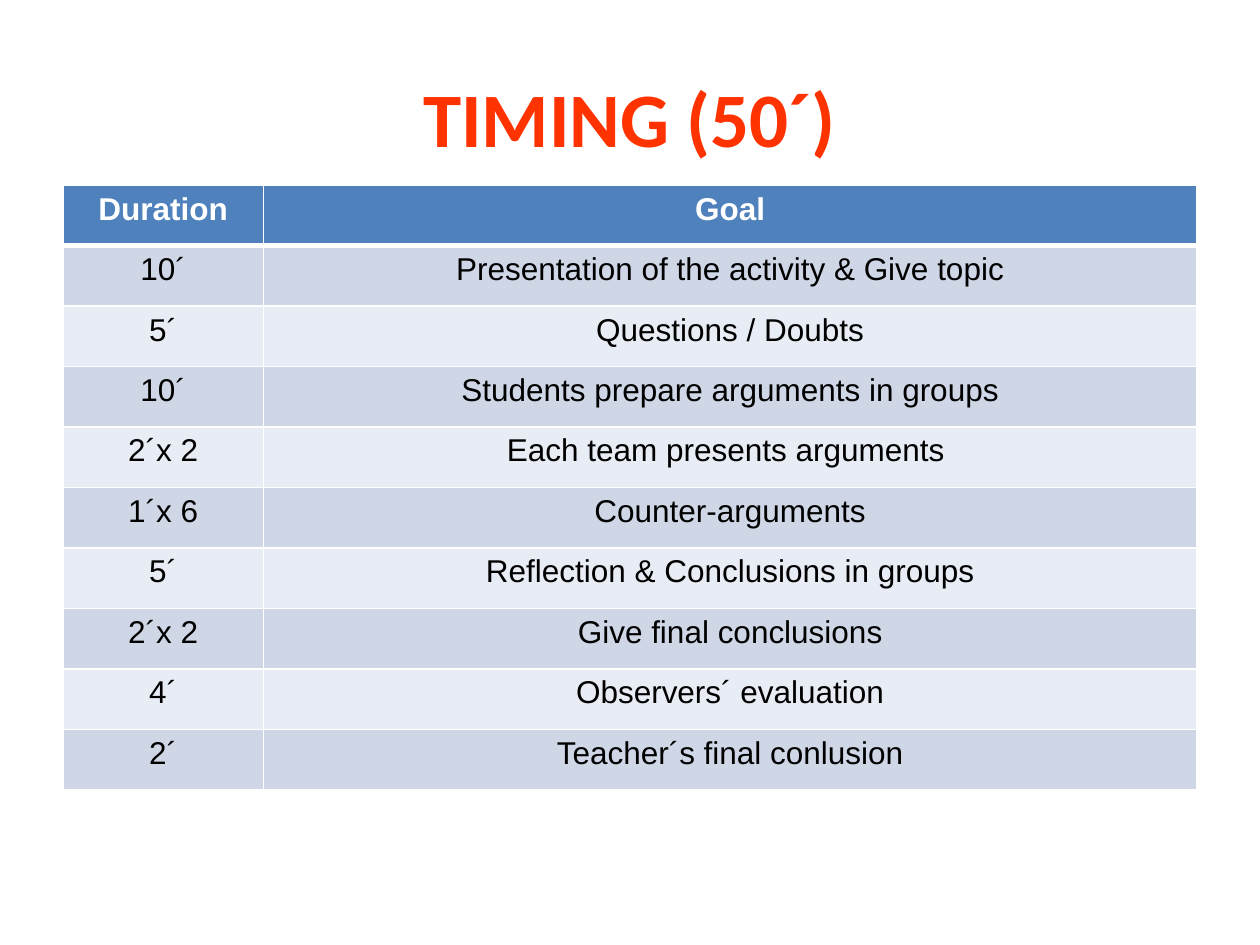
from dataclasses import dataclass

from lxml.etree import SubElement
from pptx import Presentation
from pptx.dml.color import RGBColor
from pptx.enum.text import MSO_ANCHOR, PP_ALIGN
from pptx.oxml.ns import qn
from pptx.util import Inches, Pt

COLORS = {
    "title": "FF3300",
    "header": "4F81BD",
    "band_dark": "CFD7E7",
    "band_light": "E8ECF4",
    "white": "FFFFFF",
    "black": "000000",
}
COLUMN_WIDTHS = (1.59, 7.41)
ROW_HEIGHT = 0.48
GRID_LINE, HEADER_LINE = 1, 3


@dataclass(frozen=True)
class Stage:
    duration: str
    goal: str


@dataclass(frozen=True)
class RowStyle:
    fill: str
    text: str
    bold: bool
    top: int
    bottom: int


HEADING = Stage("Duration", "Goal")
STAGES = [
    Stage("10´", "Presentation of the activity & Give topic"),
    Stage("5´", "Questions / Doubts"),
    Stage("10´", "Students prepare arguments in groups"),
    Stage("2´x 2", "Each team presents arguments "),
    Stage("1´x 6", "Counter-arguments"),
    Stage("5´", "Reflection & Conclusions in groups"),
    Stage("2´x 2", "Give final conclusions"),
    Stage("4´", "Observers´ evaluation"),
    Stage("2´", "Teacher´s final conlusion"),
]


def row_style(index: int) -> RowStyle:
    if index == 0:
        return RowStyle("header", "white", True, GRID_LINE, HEADER_LINE)
    band = "band_dark" if index % 2 else "band_light"
    top = HEADER_LINE if index == 1 else GRID_LINE
    return RowStyle(band, "black", False, top, GRID_LINE)


def write(frame, text: str, font_name: str, size: int, color: str, bold: bool) -> None:
    paragraph = frame.paragraphs[0]
    paragraph.alignment = PP_ALIGN.CENTER
    run = paragraph.add_run()
    run.text = text
    run.font.name = font_name
    run.font.size = Pt(size)
    run.font.bold = bold
    run.font.color.rgb = RGBColor.from_string(COLORS[color])


def draw_borders(cell, style: RowStyle) -> None:
    properties = cell._tc.get_or_add_tcPr()
    sides = {"L": GRID_LINE, "R": GRID_LINE, "T": style.top, "B": style.bottom}
    for side, width in sides.items():
        line = SubElement(properties, qn(f"a:ln{side}"), w=str(Pt(width)))
        fill = SubElement(line, qn("a:solidFill"))
        SubElement(fill, qn("a:srgbClr"), val=COLORS["white"])


def draw_cell(cell, text: str, style: RowStyle) -> None:
    draw_borders(cell, style)
    cell.fill.solid()
    cell.fill.fore_color.rgb = RGBColor.from_string(COLORS[style.fill])
    write(cell.text_frame, text, "Arial", 18, style.text, style.bold)


def draw_title(slide) -> None:
    title = slide.shapes.add_textbox(Inches(0.5), Inches(0.3), Inches(9), Inches(1.25))
    frame = title.text_frame
    frame.word_wrap = True
    frame.vertical_anchor = MSO_ANCHOR.MIDDLE
    write(frame, "TIMING (50´)", "Calibri", 44, "title", True)


def draw_timetable(slide) -> None:
    rows = [HEADING, *STAGES]
    timetable = slide.shapes.add_table(
        len(rows), len(COLUMN_WIDTHS), Inches(0.5), Inches(1.47),
        Inches(sum(COLUMN_WIDTHS)), Inches(ROW_HEIGHT * len(rows)),
    ).table
    for column, width in zip(timetable.columns, COLUMN_WIDTHS):
        column.width = Inches(width)
    for index, stage in enumerate(rows):
        timetable.rows[index].height = Inches(ROW_HEIGHT)
        style = row_style(index)
        draw_cell(timetable.cell(index, 0), stage.duration, style)
        draw_cell(timetable.cell(index, 1), stage.goal, style)


def main() -> None:
    presentation = Presentation()
    presentation.slide_width = Inches(10)
    presentation.slide_height = Inches(7.5)
    slide = presentation.slides.add_slide(presentation.slide_layouts[6])
    # Title above the table
    draw_title(slide)
    # Duration and goal of each stage
    draw_timetable(slide)
    presentation.save("out.pptx")


if __name__ == "__main__":
    main()
